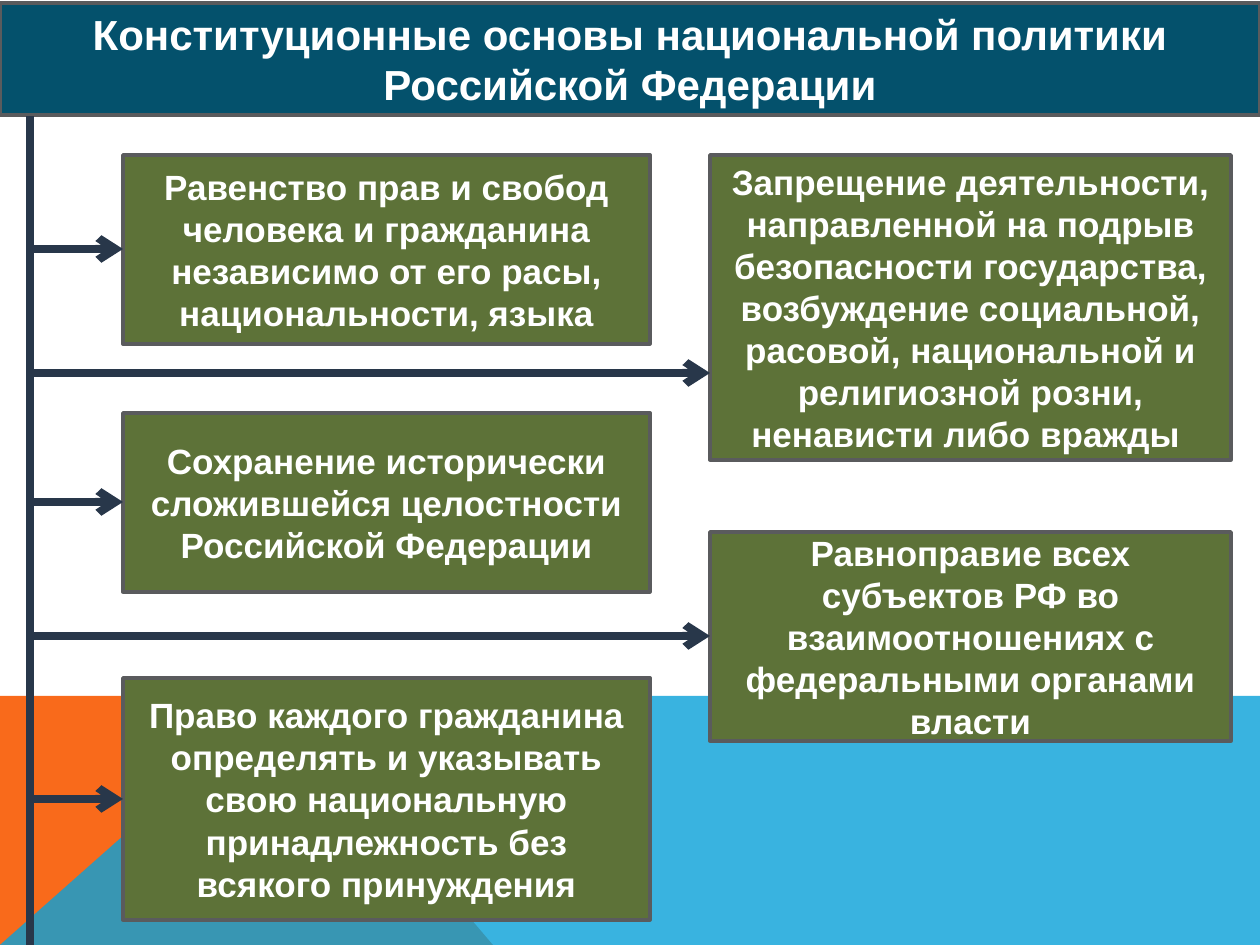
from dataclasses import dataclass

from lxml import etree
from pptx import Presentation
from pptx.dml.color import RGBColor
from pptx.enum.shapes import MSO_CONNECTOR, MSO_SHAPE
from pptx.enum.text import MSO_ANCHOR, MSO_AUTO_SIZE, PP_ALIGN
from pptx.oxml.ns import qn
from pptx.util import Emu, Pt

STRAIGHT = MSO_CONNECTOR.STRAIGHT
RECTANGLE = MSO_SHAPE.RECTANGLE
MIDDLE = MSO_ANCHOR.MIDDLE
CENTER = PP_ALIGN.CENTER
NO_AUTOFIT = MSO_AUTO_SIZE.NONE

TITLE_ONLY = 5
PX_PER_INCH = 126
SLIDE_W, SLIDE_H = 1260, 945
STEM_X = 30


@dataclass(frozen=True)
class Theme:
    font: str = "Arial"
    title_size: int = 24
    body_size: int = 20
    border_width: float = 2
    arrow_width: float = 4.5
    text: str = "FFFFFF"
    title_fill: str = "04516C"
    principle_fill: str = "5D7238"
    border: str = "5A5B5D"
    arrow: str = "28374A"
    orange: str = "F96A1B"
    blue: str = "08A1D9"


THEME = Theme()

TITLE = "Конституционные основы национальной политики Российской Федерации"

# (left, top, width, height), text, height at which the arrow enters (None: the middle)
PRINCIPLES = [
    ((123, 155, 527, 189),
     "Равенство прав и свобод человека и гражданина независимо от его расы, "
     "национальности, языка", None),
    ((710, 155, 521, 305),
     "Запрещение деятельности, направленной на подрыв безопасности государства, "
     "возбуждение социальной, расовой, национальной и религиозной розни, "
     "ненависти либо вражды ", 373),
    ((123, 413, 527, 179),
     "Сохранение исторически сложившейся целостности Российской Федерации", None),
    ((710, 532, 521, 209),
     "Равноправие всех субъектов РФ во взаимоотношениях с федеральными органами "
     "власти", None),
    ((123, 678, 527, 242),
     "Право каждого гражданина определять и указывать свою национальную "
     "принадлежность без всякого принуждения", None),
]


def px(length):
    return Emu(round(length * 914400 / PX_PER_INCH))


def rgb(color):
    return RGBColor.from_string(color)


def write_text(frame, text, *, size, color=THEME.text, bold=True, align=CENTER):
    frame.word_wrap = True
    frame.auto_size = NO_AUTOFIT
    frame.vertical_anchor = MIDDLE
    paragraph = frame.paragraphs[0]
    paragraph.alignment = align
    run = paragraph.add_run()
    run.text = text
    run.font.name = THEME.font
    run.font.size = Pt(size)
    run.font.bold = bold
    run.font.color.rgb = rgb(color)


def paint_panel(panel, fill):
    panel.fill.solid()
    panel.fill.fore_color.rgb = rgb(fill)
    panel.line.color.rgb = rgb(THEME.border)
    panel.line.width = Pt(THEME.border_width)


def add_polygon(slide, points, color, opacity=100):
    builder = slide.shapes.build_freeform(*points[0], scale=px(1))
    builder.add_line_segments(points[1:], close=True)
    polygon = builder.convert_to_shape()
    polygon.shadow.inherit = False
    polygon.line.fill.background()
    polygon.fill.solid()
    polygon.fill.fore_color.rgb = rgb(color)
    if opacity < 100:
        color_node = polygon.fill._xPr.find(qn("a:solidFill"))[0]
        etree.SubElement(color_node, qn("a:alpha"), val=str(opacity * 1000))


def add_backdrop(slide, box):
    """Orange wedge under a translucent blue field; both share one peak on the top edge."""
    left, top, width, height = box
    right, bottom = left + width, top + height
    peak = (left + 281, top)
    add_polygon(slide, [(left, bottom), (left, top), peak, (left + 493, bottom)],
                THEME.orange)
    add_polygon(slide, [(left, bottom), peak, (right, top), (right, bottom)],
                THEME.blue, opacity=80)


def add_title(slide, box):
    title = slide.shapes.title
    title.left, title.top, title.width, title.height = map(px, box)
    paint_panel(title, THEME.title_fill)
    write_text(title.text_frame, TITLE, size=THEME.title_size)


def add_principle(slide, box, text):
    panel = slide.shapes.add_shape(RECTANGLE, *map(px, box))
    panel.shadow.inherit = False
    paint_panel(panel, THEME.principle_fill)
    write_text(panel.text_frame, text, size=THEME.body_size)


def add_line(slide, start, end, arrowhead=False):
    line = slide.shapes.add_connector(STRAIGHT, *map(px, start + end))
    line.line.color.rgb = rgb(THEME.arrow)
    line.line.width = Pt(THEME.arrow_width)
    if arrowhead:
        etree.SubElement(line.line._get_or_add_ln(), qn("a:tailEnd"), type="arrow")
    etree.SubElement(line._element.spPr, qn("a:effectLst"))


def add_branches(slide, stem_top):
    """Stem down the left edge with one arrow to each principle."""
    add_line(slide, (STEM_X, stem_top), (STEM_X, SLIDE_H))
    for (left, top, _, height), _, entry in PRINCIPLES:
        y = entry or top + height // 2
        add_line(slide, (STEM_X, y), (left, y), arrowhead=True)


def main():
    deck = Presentation()
    deck.slide_width, deck.slide_height = px(SLIDE_W), px(SLIDE_H)
    slide = deck.slides.add_slide(deck.slide_layouts[TITLE_ONLY])
    add_backdrop(slide, (0, 696, SLIDE_W, SLIDE_H - 696))
    add_title(slide, (0, 3, SLIDE_W, 112))
    for box, text, _ in PRINCIPLES:
        add_principle(slide, box, text)
    add_branches(slide, stem_top=116)
    deck.save("out.pptx")


if __name__ == "__main__":
    main()
